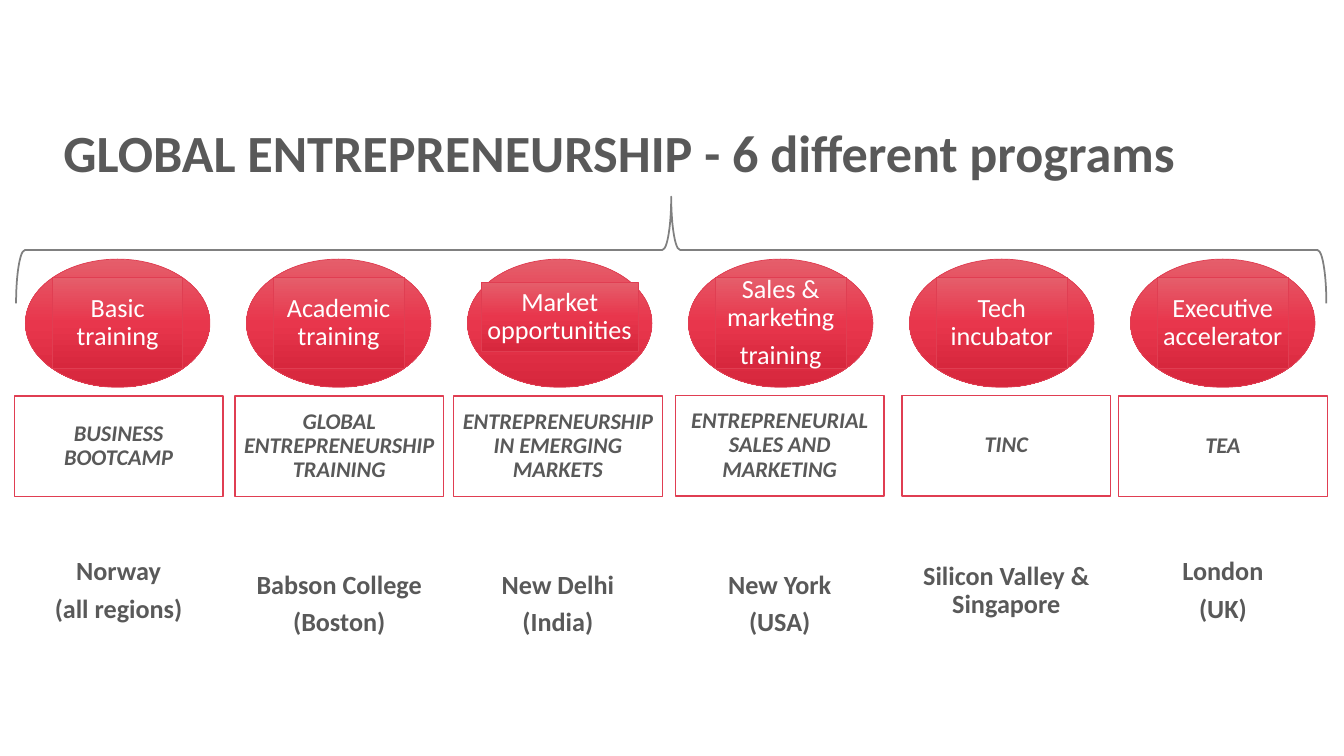
from copy import deepcopy

from pptx import Presentation
from pptx.dml.color import RGBColor
from pptx.enum.shapes import MSO_SHAPE
from pptx.enum.text import MSO_ANCHOR, PP_ALIGN
from pptx.util import Cm, Pt

WHITE, GREY, RED = "FFFFFF", "595959", "E03E52"
GRADIENT = [(0, "E55E6B"), (0.5, "E8364C"), (1, "D7273D")]

# topic, program, place, left edge of program box, top of program box, height of place text
PROGRAMS = [
    ("Basic training", "BUSINESS BOOTCAMP", "Norway\n(all regions)", 0.36, 9.98, 4.39),
    ("Academic training", "GLOBAL ENTREPRENEURSHIP TRAINING", "Babson College\n(Boston)",
     5.92, 9.98, 5.08),
    ("Market opportunities", "ENTREPRENEURSHIP IN EMERGING MARKETS", "New Delhi\n(India)",
     11.43, 9.98, 5.08),
    ("Sales & marketing\ntraining", "ENTREPRENEURIAL SALES AND MARKETING", "New York\n(USA)",
     17.02, 9.96, 5.08),
    ("Tech incubator", "TINC", "Silicon Valley & Singapore", 22.73, 9.96, 4.39),
    ("Executive accelerator", "TEA", "London\n(UK)", 28.19, 9.98, 4.39),
]
TOPIC_LEFT, TOPIC_TOP, TOPIC_STEP = 0.64, 6.53, 5.57
TOPIC_WIDTH, TOPIC_HEIGHT = 4.65, 3.23
PROGRAM_WIDTH, PROGRAM_HEIGHT = 5.26, 2.54
PLACE_TOP = 12.7


def color(value):
    return RGBColor.from_string(value)


def format_font(font, size, value, bold=False, italic=False):
    font.name = "Calibri"
    font.size = Pt(size)
    font.bold = bold
    font.italic = italic
    font.color.rgb = color(value)


def write_centred(shape, text, size, value, bold=False, italic=False):
    frame = shape.text_frame
    frame.text = text
    frame.word_wrap = True
    frame.vertical_anchor = MSO_ANCHOR.MIDDLE
    frame.margin_left = frame.margin_right = Cm(0.1)
    frame.margin_top = frame.margin_bottom = Cm(0.1)
    for paragraph in frame.paragraphs:
        paragraph.alignment = PP_ALIGN.CENTER
        paragraph.line_spacing = 0.9
        paragraph.space_after = Pt(6.5)
        for run in paragraph.runs:
            format_font(run.font, size, value, bold, italic)


def add_outlined(shapes, kind, left, top, width, height, line, weight):
    shape = shapes.add_shape(kind, Cm(left), Cm(top), Cm(width), Cm(height))
    shape.shadow.inherit = False
    shape.line.color.rgb = color(line)
    shape.line.width = Pt(weight)
    return shape


def fill_gradient(shape):
    """Fill from top to bottom with the three reds."""
    shape.fill.gradient()
    shape.fill.gradient_angle = 270
    last_stop = shape.fill.gradient_stops[1]._gs
    last_stop.addnext(deepcopy(last_stop))
    for stop, (position, value) in zip(shape.fill.gradient_stops, GRADIENT):
        stop.position = position
        stop.color.rgb = color(value)


def add_topic(slide, text, left, inset_x, inset_y, label_height):
    """Group an ellipse with the label panel that lies on it."""
    shapes = slide.shapes.add_group_shape().shapes
    ellipse = add_outlined(shapes, MSO_SHAPE.OVAL, left, TOPIC_TOP,
                           TOPIC_WIDTH, TOPIC_HEIGHT, RED, 0.5)
    label = add_outlined(shapes, MSO_SHAPE.RECTANGLE, left + inset_x, TOPIC_TOP + inset_y,
                         TOPIC_WIDTH - 2 * inset_x, label_height, RED, 0.5)
    for shape in (ellipse, label):
        fill_gradient(shape)
    write_centred(label, text, 18.7, WHITE)


def add_program(slide, text, left, top):
    box = add_outlined(slide.shapes, MSO_SHAPE.RECTANGLE, left, top,
                       PROGRAM_WIDTH, PROGRAM_HEIGHT, RED, 1)
    box.fill.solid()
    box.fill.fore_color.rgb = color(WHITE)
    write_centred(box, text, 16, GREY, bold=True, italic=True)


def add_place(slide, text, left, height):
    box = slide.shapes.add_textbox(Cm(left), Cm(PLACE_TOP), Cm(PROGRAM_WIDTH), Cm(height))
    write_centred(box, text, 18.7, GREY, bold=True)


def add_brace(slide):
    brace = add_outlined(slide.shapes, MSO_SHAPE.LEFT_BRACE, 15.57, -10.21, 2.69, 33.02,
                         "808080", 1.25)
    brace.fill.background()
    brace.rotation = 90


def add_title(slide, text):
    title = slide.shapes.add_textbox(Cm(1.35), Cm(2.9), Cm(31.09), Cm(1.85))
    title.text_frame.word_wrap = True
    title.text_frame.text = text
    format_font(title.text_frame.paragraphs[0].runs[0].font, 37.3, GREY, bold=True)


def main():
    presentation = Presentation()
    presentation.slide_width = Cm(33.87)
    presentation.slide_height = Cm(19.05)
    slide = presentation.slides.add_slide(presentation.slide_layouts[6])

    for index, (topic, program, place, left, top, place_height) in enumerate(PROGRAMS):
        label = (0.35, 0.58, 1.75) if topic == "Market opportunities" else (0.68, 0.46, 2.29)
        add_topic(slide, topic, TOPIC_LEFT + index * TOPIC_STEP, *label)
        add_program(slide, program, left, top)
        add_place(slide, place, left, place_height)
    add_brace(slide)
    add_title(slide, "GLOBAL ENTREPRENEURSHIP - 6 different programs")

    presentation.save("out.pptx")


if __name__ == "__main__":
    main()
